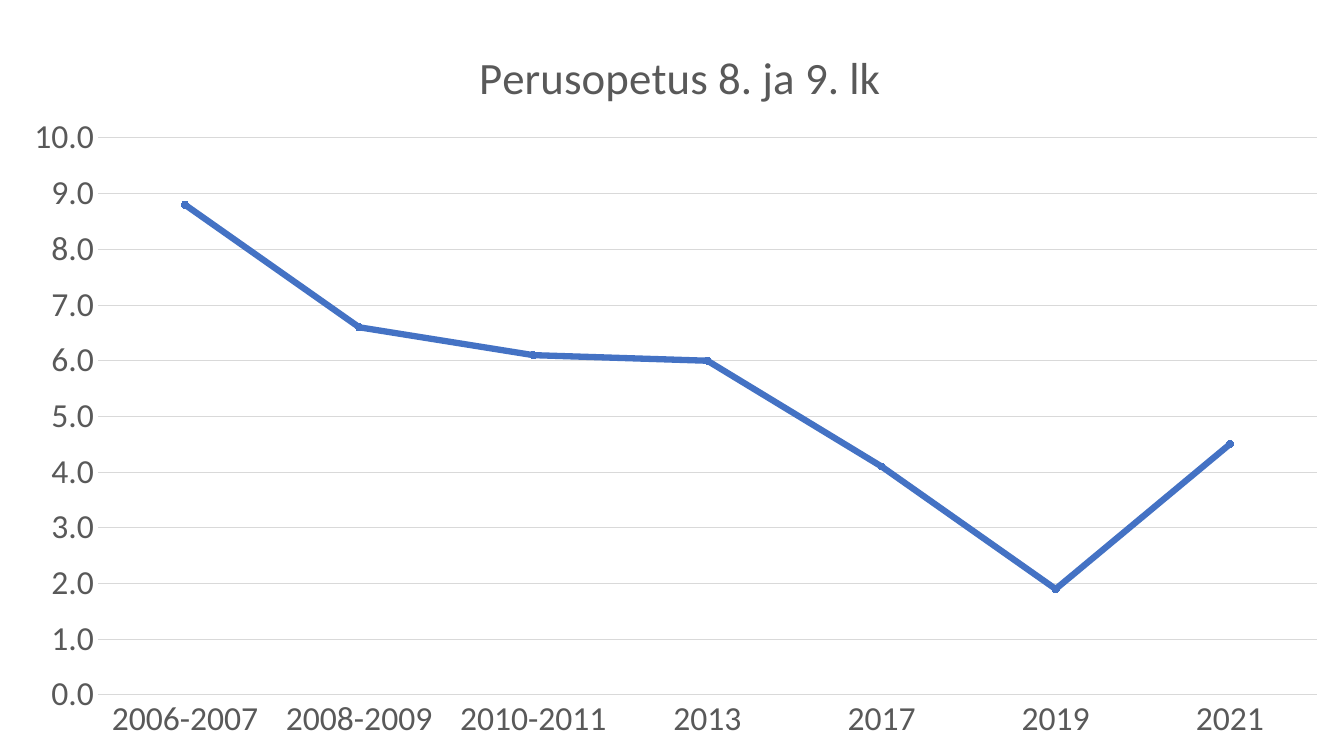
from dataclasses import dataclass

from lxml.etree import SubElement
from pptx import Presentation
from pptx.chart.data import CategoryChartData
from pptx.dml.color import RGBColor
from pptx.enum.chart import XL_CHART_TYPE, XL_MARKER_STYLE, XL_TICK_MARK
from pptx.oxml.ns import qn
from pptx.util import Emu, Pt

WIDTH, HEIGHT = 1344, 756
EMU_PER_PX = 12192000 / WIDTH
FONT = "Calibri"
GREY, GRID, BLUE = "595959", "D9D9D9", "4472C4"
TITLE = "Perusopetus 8. ja 9. lk"
SHARES = {
    "2006-2007": 8.8,
    "2008-2009": 6.6,
    "2010-2011": 6.1,
    "2013": 6.0,
    "2017": 4.1,
    "2019": 1.9,
    "2021": 4.5,
}


@dataclass
class Area:
    x: int
    y: int
    w: int = 0
    h: int = 0


TITLE_AREA = Area(471, 38)
PLOT_AREA = Area(98, 138, 1219, 557)


def px(length: int) -> Emu:
    return Emu(round(length * EMU_PER_PX))


def colour(value: str) -> RGBColor:
    return RGBColor.from_string(value)


def style(target, values: dict) -> None:
    for name, value in values.items():
        setattr(target, name, value)


def style_font(font, size: int) -> None:
    style(font, {"name": FONT, "size": Pt(size), "bold": False})
    font.color.rgb = colour(GREY)


def style_line(line, value: str, width: float) -> None:
    line.color.rgb = colour(value)
    line.width = Pt(width)


def place(parent, area: Area) -> None:
    """Give a chart part a fixed position within the chart."""
    layout = parent.find(qn("c:layout"))
    if layout is None:
        layout = SubElement(parent, qn("c:layout"))
        parent.insert(0, layout)
    manual = SubElement(layout, qn("c:manualLayout"))
    settings = {"xMode": "edge", "yMode": "edge",
                "x": area.x / WIDTH, "y": area.y / HEIGHT}
    if area.w:
        settings = {"layoutTarget": "inner", **settings,
                    "w": area.w / WIDTH, "h": area.h / HEIGHT}
    for name, value in settings.items():
        SubElement(manual, qn(f"c:{name}")).set("val", str(value))


def main() -> None:
    deck = Presentation()
    style(deck, {"slide_width": px(WIDTH), "slide_height": px(HEIGHT)})
    page = deck.slides.add_slide(deck.slide_layouts[6])

    # Line chart over the whole page
    data = CategoryChartData(number_format="0.0")
    data.categories = list(SHARES)
    data.add_series(TITLE, list(SHARES.values()))
    chart = page.shapes.add_chart(
        XL_CHART_TYPE.LINE_MARKERS, 0, 0, px(WIDTH), px(HEIGHT), data).chart
    style(chart, {"has_legend": False, "has_title": True})
    style_font(chart.font, 24)
    chart.plots[0].vary_by_categories = False

    # Title
    para = chart.chart_title.text_frame.paragraphs[0]
    span = para.add_run()
    span.text = TITLE
    style_font(span.font, 32)
    chart.chart_title.include_in_layout = False

    # Axes
    for axis in (chart.category_axis, chart.value_axis):
        style(axis, {"major_tick_mark": XL_TICK_MARK.NONE,
                     "minor_tick_mark": XL_TICK_MARK.NONE})
        style_font(axis.tick_labels.font, 24)
    style_line(chart.category_axis.format.line, GRID, 0.75)
    style(chart.value_axis, {"minimum_scale": 0, "maximum_scale": 10,
                             "major_unit": 1, "has_major_gridlines": True})
    style(chart.value_axis.tick_labels,
          {"number_format": "0.0", "number_format_is_linked": False})
    chart.value_axis.format.line.fill.background()
    style_line(chart.value_axis.major_gridlines.format.line, GRID, 0.75)

    # Series
    series = chart.plots[0].series[0]
    series.smooth = False
    style_line(series.format.line, BLUE, 4.5)
    style(series.marker, {"style": XL_MARKER_STYLE.CIRCLE, "size": 5})
    series.marker.format.fill.solid()
    series.marker.format.fill.fore_color.rgb = colour(BLUE)
    style_line(series.marker.format.line, BLUE, 0.75)

    # Positions inside the chart
    place(next(chart.element.iter(qn("c:title"))), TITLE_AREA)
    place(next(chart.element.iter(qn("c:plotArea"))), PLOT_AREA)

    deck.save("out.pptx")


if __name__ == "__main__":
    main()
